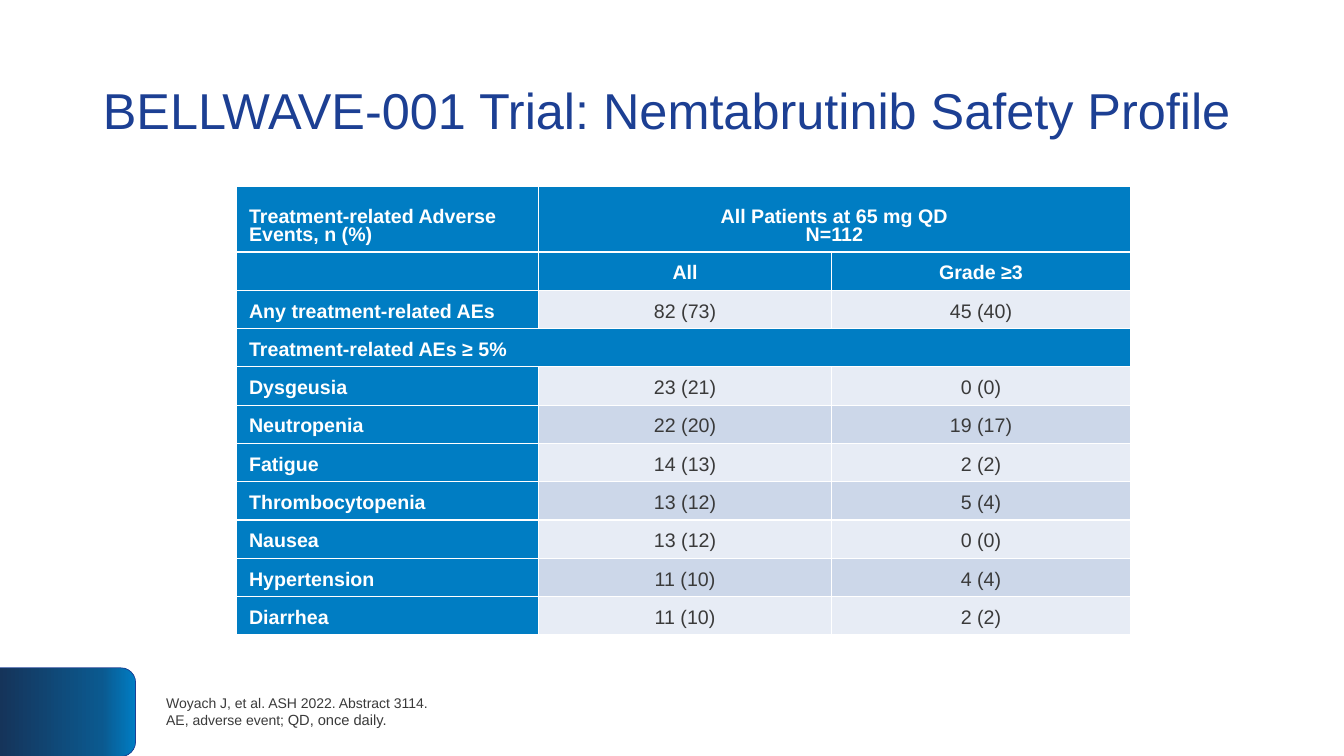
from copy import deepcopy
from dataclasses import dataclass

from lxml.etree import SubElement
from pptx import Presentation
from pptx.dml.color import RGBColor
from pptx.enum.shapes import MSO_SHAPE
from pptx.enum.text import MSO_ANCHOR, MSO_AUTO_SIZE, PP_ALIGN
from pptx.oxml.ns import qn
from pptx.util import Inches, Pt


@dataclass(frozen=True)
class Theme:
    face: str = "Arial"
    navy: str = "1C3F93"
    blue: str = "007DC3"
    mid_blue: str = "0B598F"
    deep_blue: str = "15345A"
    white: str = "FFFFFF"
    ink: str = "3A3A3A"
    bands: tuple = ("E7ECF5", "CCD7E9")
    title_size: float = 36
    table_size: float = 14
    note_size: float = 10
    note_end_size: float = 10.5


def assign(target, values):
    for name, value in values.items():
        setattr(target, name, value)


class SafetySlide:
    def __init__(self, deck, theme):
        self.theme = theme
        self.slide = deck.slides.add_slide(deck.slide_layouts[5])

    def add_lines(self, frame, lines, size, color, bold=False,
                  align=PP_ALIGN.LEFT, spacing=1.0):
        for index, line in enumerate(lines):
            paragraph = frame.add_paragraph() if index else frame.paragraphs[0]
            assign(paragraph, {"alignment": align, "line_spacing": spacing})
            for text, run_size in line if isinstance(line, list) else [(line, size)]:
                run = paragraph.add_run()
                run.text = text
                assign(run.font, {"name": self.theme.face, "size": Pt(run_size), "bold": bold})
                run.font.color.rgb = RGBColor.from_string(color)

    def title(self, text, box):
        heading = self.slide.shapes.title
        assign(heading, box)
        assign(heading.text_frame, {
            "word_wrap": True,
            "auto_size": MSO_AUTO_SIZE.NONE,
            "vertical_anchor": MSO_ANCHOR.MIDDLE,
        })
        self.add_lines(heading.text_frame, [text], self.theme.title_size,
                       self.theme.navy, spacing=0.9)

    def corner_tab(self, box, turn, stops):
        tab = self.slide.shapes.add_shape(MSO_SHAPE.ROUND_2_SAME_RECTANGLE, **box)
        tab.rotation = turn
        tab.shadow.inherit = False
        tab.fill.gradient()
        tab.fill.gradient_angle = 270
        stop_list = tab._element.spPr.find(".//" + qn("a:gsLst"))
        stop_list.append(deepcopy(stop_list[0]))
        for stop, (position, color) in zip(tab.fill.gradient_stops, stops):
            stop.position = position
            stop.color.rgb = RGBColor.from_string(color)
        tab.line.width = Pt(0.5)
        tab.line.color.rgb = RGBColor.from_string(self.theme.navy)

    def footnote(self, lines, box):
        note = self.slide.shapes.add_textbox(**box)
        assign(note.text_frame, {"word_wrap": True, "vertical_anchor": MSO_ANCHOR.MIDDLE})
        self.add_lines(note.text_frame, lines, self.theme.note_size, self.theme.ink)

    def border(self, cell):
        properties = cell._tc.get_or_add_tcPr()
        for position, side in enumerate(("lnL", "lnR", "lnT", "lnB")):
            line = SubElement(properties, qn(f"a:{side}"), w=str(Pt(1)))
            fill = SubElement(line, qn("a:solidFill"))
            SubElement(fill, qn("a:srgbClr"), val=self.theme.white)
            properties.insert(position, line)

    def cell(self, cell, text, is_header, align, band):
        theme = self.theme
        assign(cell, {
            "margin_left": Inches(0.13), "margin_right": Inches(0.13),
            "margin_top": Inches(0.07), "margin_bottom": Inches(0.07),
            "vertical_anchor": MSO_ANCHOR.BOTTOM,
        })
        cell.fill.solid()
        cell.fill.fore_color.rgb = RGBColor.from_string(theme.blue if is_header else band)
        self.border(cell)
        if text:
            self.add_lines(cell.text_frame, text.split("\n"), theme.table_size,
                           theme.white if is_header else theme.ink, is_header, align, 0.8)
        else:
            SubElement(cell.text_frame.paragraphs[0]._p, qn("a:endParaRPr"),
                       sz=str(theme.table_size * 100))

    def table(self, rows, left, top, widths, heights, merges, header_rows):
        grid = self.slide.shapes.add_table(
            len(rows), len(widths), Inches(left), Inches(top),
            Inches(sum(widths)), Inches(sum(heights))).table
        assign(grid, {"first_row": False, "horz_banding": False})
        for column, width in zip(grid.columns, widths):
            column.width = Inches(width)
        for row, height in zip(grid.rows, heights):
            row.height = Inches(height)
        for row, first, last in merges:
            grid.cell(row, first).merge(grid.cell(row, last))
        for row, values in enumerate(rows):
            for column, text in enumerate(values):
                self.cell(grid.cell(row, column), text,
                          row in header_rows or column == 0,
                          PP_ALIGN.CENTER if column else PP_ALIGN.LEFT,
                          self.theme.bands[row % 2])


def place(left, top, width, height):
    return {"left": Inches(left), "top": Inches(top),
            "width": Inches(width), "height": Inches(height)}


ADVERSE_EVENTS = [
    ("Treatment-related Adverse\nEvents, n (%)", "All Patients at 65 mg QD\nN=112", ""),
    ("", "All", "Grade ≥3"),
    ("Any treatment-related AEs", "82 (73)", "45 (40)"),
    ("Treatment-related AEs ≥ 5%", "", ""),
    ("Dysgeusia", "23 (21)", "0 (0)"),
    ("Neutropenia", "22 (20)", "19 (17)"),
    ("Fatigue", "14 (13)", "2 (2)"),
    ("Thrombocytopenia", "13 (12)", "5 (4)"),
    ("Nausea", "13 (12)", "0 (0)"),
    ("Hypertension", "11 (10)", "4 (4)"),
    ("Diarrhea", "11 (10)", "2 (2)"),
]


def main():
    deck = Presentation()
    assign(deck, {"slide_width": Inches(13.33), "slide_height": Inches(7.5)})
    theme = Theme()
    safety = SafetySlide(deck, theme)
    safety.corner_tab(place(0.23, 6.39, 0.88, 1.35), 90,
                      [(0, theme.blue), (0.25, theme.mid_blue), (1, theme.deep_blue)])
    safety.title("BELLWAVE-001 Trial: Nemtabrutinib Safety Profile",
                 place(0.92, 0.4, 11.5, 1.45))
    safety.table(ADVERSE_EVENTS, 2.34, 1.85, [3, 2.91, 2.96],
                 [0.65] + [0.38] * (len(ADVERSE_EVENTS) - 1),
                 merges=[(0, 1, 2), (3, 0, 2)], header_rows=(0, 1, 3))
    safety.footnote([
        "Woyach J, et al. ASH 2022. Abstract 3114.",
        [("AE, adverse event; ", theme.note_size), ("QD, once daily.", theme.note_end_size)],
    ], place(1.55, 6.62, 11.65, 0.88))
    deck.save("out.pptx")


if __name__ == "__main__":
    main()
